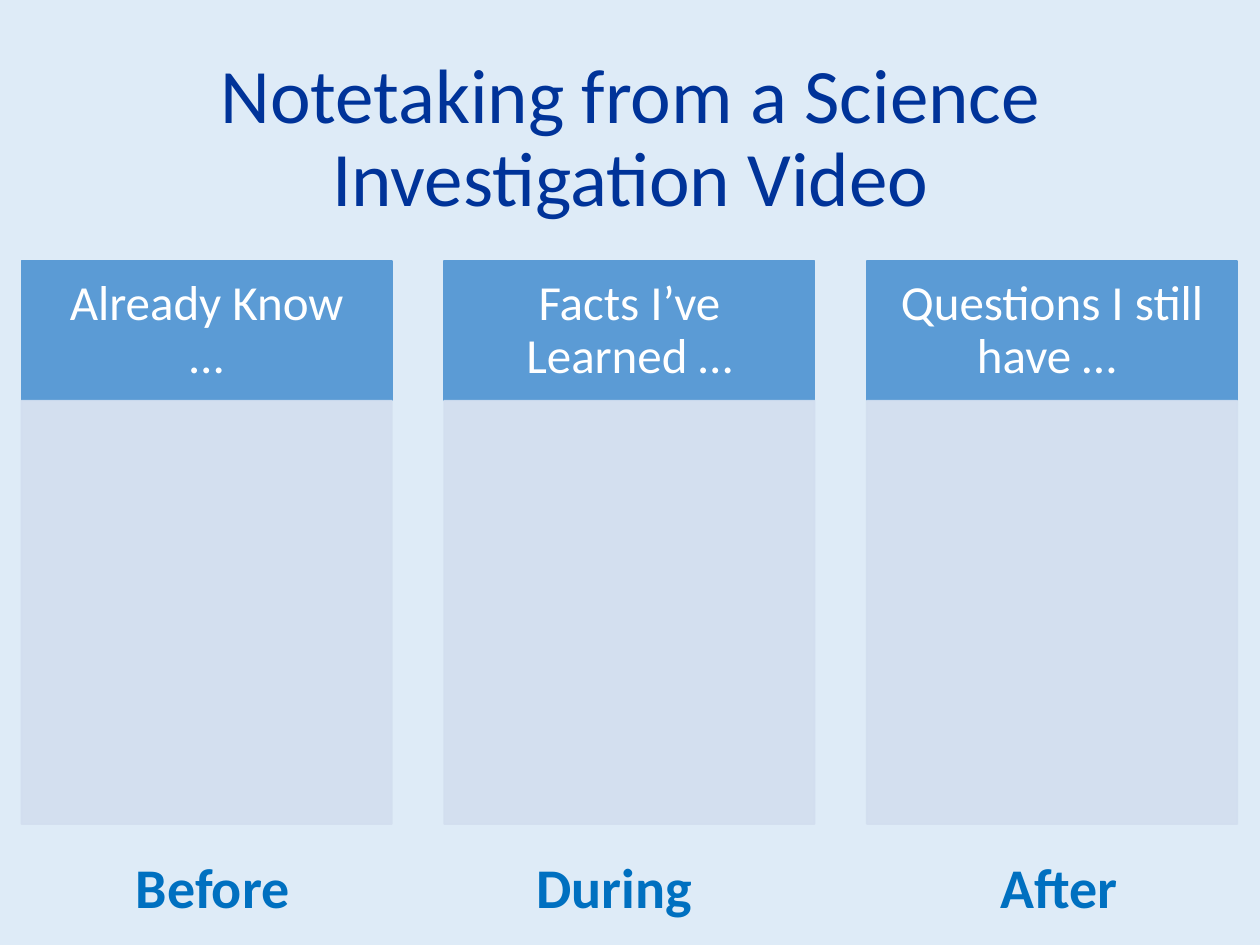
from dataclasses import dataclass

from lxml.etree import SubElement
from pptx import Presentation
from pptx.dml.color import RGBColor
from pptx.enum.shapes import MSO_SHAPE
from pptx.enum.text import MSO_ANCHOR, MSO_AUTO_SIZE, PP_ALIGN
from pptx.oxml.ns import qn
from pptx.util import Inches, Pt

# Content: heading, stage label, label left, label width
TITLE = "Notetaking from a Science Investigation Video"
COLUMNS = [
    ("Already Know …", "Before", 0.98, 1.43),
    ("Facts I’ve Learned …", "During", 4.16, 1.45),
    ("Questions I still have … ", "After", 7.84, 1.15),
]


@dataclass(frozen=True)
class Theme:
    font: str = "Calibri"
    background: str = "DEEBF7"
    title: str = "003399"
    header: str = "5B9BD5"
    header_text: str = "FFFFFF"
    body: str = "D2DEEF"
    label: str = "0070C0"
    title_size: int = 44
    header_size: int = 28
    label_size: int = 32
    body_opacity: int = 90


THEME = Theme()

# Column grid
LEFT, PITCH, WIDTH = 0.17, 3.355, 2.94
HEADER_TOP, HEADER_HEIGHT = 2.07, 1.11
BODY_TOP, BODY_HEIGHT = HEADER_TOP + HEADER_HEIGHT, 3.36
LABEL_TOP, LABEL_HEIGHT = 6.72, 0.64


def write(shape, text, size, color, bold=False):
    paragraph = shape.text_frame.paragraphs[0]
    paragraph.text = text
    font = paragraph.runs[0].font
    font.name, font.size, font.bold = THEME.font, Pt(size), bold
    font.color.rgb = RGBColor.from_string(color)
    return paragraph


def add_text_box(slide, left, top, width, height, wrap):
    box = slide.shapes.add_textbox(*map(Inches, (left, top, width, height)))
    box.text_frame.word_wrap = wrap
    return box


def add_panel(slide, left, top, height, color, opacity=100):
    panel = slide.shapes.add_shape(
        MSO_SHAPE.RECTANGLE, *map(Inches, (left, top, WIDTH, height)))
    panel.shadow.inherit = False
    panel.line.width = Pt(1)
    for fill in (panel.fill, panel.line.fill):
        fill.solid()
        fill.fore_color.rgb = RGBColor.from_string(color)
    if opacity < 100:
        for color_element in panel._element.spPr.iter(qn("a:srgbClr")):
            SubElement(color_element, qn("a:alpha"), val=str(opacity * 1000))
    return panel


def add_header(slide, left, text):
    header = add_panel(slide, left, HEADER_TOP, HEADER_HEIGHT, THEME.header)
    frame = header.text_frame
    frame.word_wrap = True
    frame.vertical_anchor = MSO_ANCHOR.MIDDLE
    frame.margin_left = frame.margin_right = Inches(0.22)
    frame.margin_top = frame.margin_bottom = Inches(0.12)
    paragraph = write(header, text, THEME.header_size, THEME.header_text)
    paragraph.alignment = PP_ALIGN.CENTER
    paragraph.line_spacing = 0.9


def main():
    presentation = Presentation()
    presentation.slide_width, presentation.slide_height = Inches(10), Inches(7.5)
    slide = presentation.slides.add_slide(presentation.slide_layouts[6])
    slide.background.fill.solid()
    slide.background.fill.fore_color.rgb = RGBColor.from_string(THEME.background)

    # Title
    title = add_text_box(slide, 0.53, 0.4, 8.95, 1.13, wrap=True)
    paragraph = write(title, TITLE, THEME.title_size, THEME.title)
    paragraph.alignment = PP_ALIGN.CENTER
    paragraph.line_spacing = 0.9
    paragraph.space_before = Pt(10)

    # Columns: header, empty note area and stage label
    for index, (heading, stage, label_left, label_width) in enumerate(COLUMNS):
        left = LEFT + index * PITCH
        add_header(slide, left, heading)
        add_panel(slide, left, BODY_TOP, BODY_HEIGHT, THEME.body, THEME.body_opacity)
        label = add_text_box(
            slide, label_left, LABEL_TOP, label_width, LABEL_HEIGHT, wrap=False)
        label.text_frame.auto_size = MSO_AUTO_SIZE.SHAPE_TO_FIT_TEXT
        write(label, stage, THEME.label_size, THEME.label, bold=True)

    presentation.save("out.pptx")


if __name__ == "__main__":
    main()
